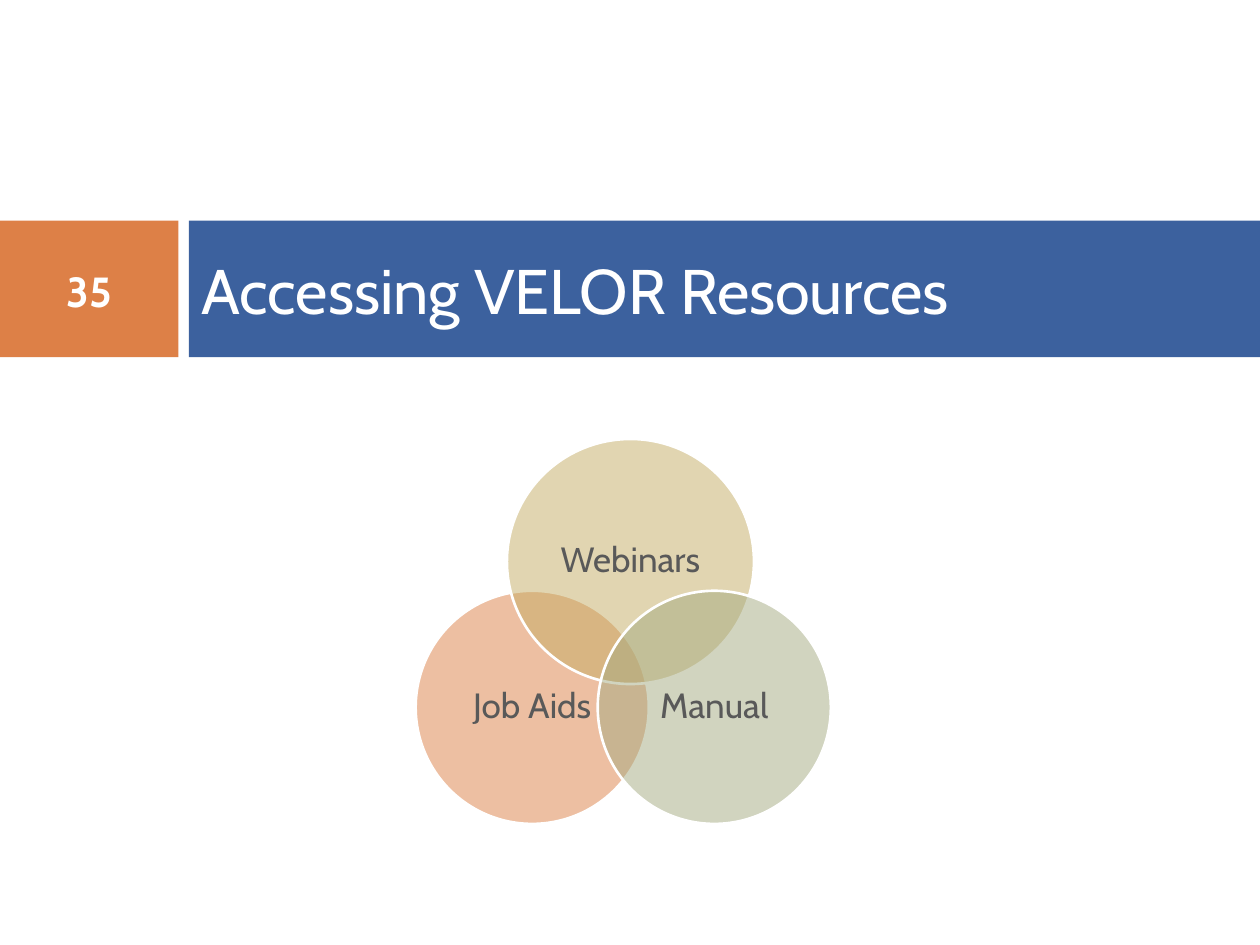
import lxml.etree
import pptx
import pptx.dml.color
import pptx.enum.shapes
import pptx.enum.text
import pptx.oxml.ns
import pptx.util
from pptx.util import Cm

WHITE = "FFFFFF"
ORANGE = "DD8047"
BLUE = "3C619E"
GREY = "595959"
SHAPE = pptx.enum.shapes.MSO_SHAPE
ALIGN = pptx.enum.text.PP_ALIGN


def paint(color_format, hex_color):
    color_format.rgb = pptx.dml.color.RGBColor.from_string(hex_color)


def write(shape, text, size, color, bold=False, align=ALIGN.CENTER, spacing=1.0, inset=0.25):
    """Put one formatted, vertically centred paragraph in a shape; inset in cm, left and right."""
    frame = shape.text_frame
    frame.word_wrap = True
    frame.auto_size = pptx.enum.text.MSO_AUTO_SIZE.NONE
    frame.vertical_anchor = pptx.enum.text.MSO_ANCHOR.MIDDLE
    frame.margin_left = frame.margin_right = Cm(inset)
    paragraph = frame.paragraphs[0]
    paragraph.alignment = align
    paragraph.line_spacing = spacing
    run = paragraph.add_run()
    run.text = text
    run.font.name = "Cabin"
    run.font.size = pptx.util.Pt(size)
    run.font.bold = bold
    paint(run.font.color, color)


presentation = pptx.Presentation()
presentation.slide_width = Cm(25.4)
presentation.slide_height = Cm(19.05)
slide = presentation.slides.add_slide(presentation.slide_layouts[5])

# Header bands
band_top, band_height = Cm(4.45), Cm(2.75)
for left, width, color in [(0, 3.6, ORANGE), (3.81, 21.59, BLUE)]:
    band = slide.shapes.add_shape(SHAPE.RECTANGLE, Cm(left), band_top, Cm(width), band_height)
    band.shadow.inherit = False
    band.fill.solid()
    paint(band.fill.fore_color, color)
    band.line.fill.background()

# Title, raised above the bands
title = slide.shapes.title
title.left, title.top, title.width, title.height = Cm(3.81), band_top, Cm(21.16), band_height
write(title, "Accessing VELOR Resources", size=36, color=WHITE, align=ALIGN.LEFT)
band.element.addnext(title.element)

number = slide.shapes.add_textbox(0, Cm(4.88), Cm(3.6), Cm(1.95))
write(number, "35", size=24, color=WHITE, bold=True)

# Overlapping circles: label, colour, centre x, centre y, width, height in cm
circles = [
    ("Job Aids", ORANGE, 10.73, 14.26, 4.7, 4.7),
    ("Webinars", "C4AD64", 12.71, 11.32, 4.98, 4.94),
    ("Manual", "A5AB81", 14.4, 14.26, 4.7, 4.7),
]
for label, color, center_x, center_y, width, height in circles:
    circle = slide.shapes.add_shape(
        SHAPE.OVAL, Cm(center_x - width / 2), Cm(center_y - height / 2), Cm(width), Cm(height))
    circle.shadow.inherit = False
    circle.fill.solid()
    paint(circle.fill.fore_color, color)
    fill_color = circle.element.spPr.find(
        pptx.oxml.ns.qn("a:solidFill")).find(pptx.oxml.ns.qn("a:srgbClr"))
    lxml.etree.SubElement(fill_color, pptx.oxml.ns.qn("a:alpha"), val="50000")
    paint(circle.line.color, WHITE)
    circle.line.width = pptx.util.Pt(1.5)
    write(circle, label, size=20, color=GREY, spacing=0.9, inset=0.2)

presentation.save("out.pptx")
